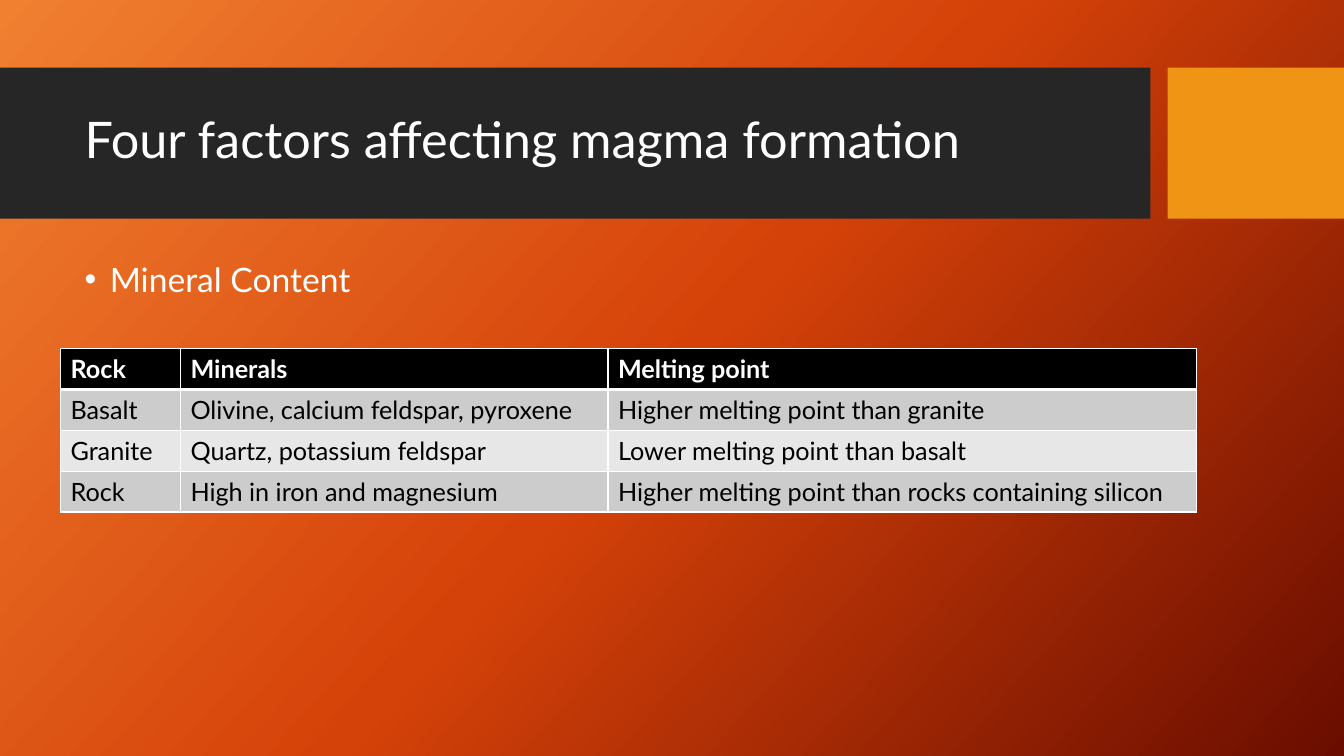
from collections import namedtuple
from copy import deepcopy
from dataclasses import dataclass

from lxml.etree import SubElement
from pptx import Presentation
from pptx.dml.color import RGBColor
from pptx.enum.shapes import MSO_SHAPE
from pptx.enum.text import MSO_ANCHOR, PP_ALIGN
from pptx.oxml.ns import qn
from pptx.util import Inches, Pt

Box = namedtuple("Box", "left top width height")


@dataclass(frozen=True)
class Theme:
    """Colours, font and type sizes of the slide."""
    font: str = "Lato"
    title_size: int = 36
    body_size: int = 24
    table_size: int = 18
    light: str = "FFFFFF"
    dark: str = "000000"
    band: str = "262626"
    accent: str = "F09415"
    bands: tuple = ("CCCCCC", "E7E7E7")
    backdrop: tuple = ((0, "F18031"), (0.5, "D54209"), (1, "6A0D00"))
    backdrop_angle: int = 42


THEME = Theme()
COLUMN_WIDTHS = (1.19, 4.24, 5.84)
ROWS = (
    ("Rock", "Minerals", "Melting point"),
    ("Basalt", "Olivine, calcium feldspar, pyroxene", "Higher melting point than granite"),
    ("Granite", "Quartz, potassium feldspar", "Lower melting point than basalt"),
    ("Rock", "High in iron and magnesium", "Higher melting point than rocks containing silicon"),
)


def write_text(frame, text, size, color=THEME.light, bold=False, spacing=1.0, bullet=None):
    """Write one formatted paragraph into a text frame."""
    frame.word_wrap = True
    paragraph = frame.paragraphs[0]
    if bullet:
        properties = paragraph._p.get_or_add_pPr()
        properties.set("marL", str(Inches(0.25)))
        properties.set("indent", str(-Inches(0.25)))
        SubElement(properties, qn("a:buFont")).set("typeface", "Arial")
        SubElement(properties, qn("a:buChar")).set("char", bullet)
    paragraph.alignment = PP_ALIGN.LEFT
    paragraph.line_spacing = spacing
    run = paragraph.add_run()
    run.text = text
    run.font.name = THEME.font
    run.font.size = Pt(size)
    run.font.bold = bold
    run.font.color.rgb = RGBColor.from_string(color)


def paint_background(slide):
    """Fill the background with the diagonal gradient."""
    fill = slide.background.fill
    fill.gradient()
    fill.gradient_angle = 360 - THEME.backdrop_angle
    stop_list = next(slide.element.iter(qn("a:gsLst")))
    stop_list.append(deepcopy(stop_list[-1]))
    for stop, (position, color) in zip(fill.gradient_stops, THEME.backdrop):
        stop.position = position
        stop.color.rgb = RGBColor.from_string(color)


def add_block(slide, box, color):
    """Add a plain filled rectangle."""
    shape = slide.shapes.add_shape(MSO_SHAPE.RECTANGLE, *map(Inches, box))
    shape.shadow.inherit = False
    shape.fill.solid()
    shape.fill.fore_color.rgb = RGBColor.from_string(color)
    shape.line.fill.background()


def add_header(slide, box, title):
    """Add the title band with its accent block at the right."""
    accent_width, gap = 1.75, 0.17
    band_width = box.width - accent_width - gap
    add_block(slide, box._replace(width=band_width), THEME.band)
    add_block(slide, box._replace(left=box.left + band_width + gap, width=accent_width), THEME.accent)
    title_box = Box(box.left + 0.74, box.top + 0.15, 10.51, 1.18)
    frame = slide.shapes.add_textbox(*map(Inches, title_box)).text_frame
    frame.vertical_anchor = MSO_ANCHOR.MIDDLE
    write_text(frame, title, THEME.title_size, spacing=0.9)


def add_body(slide, box, text):
    """Add the bulleted body text."""
    frame = slide.shapes.add_textbox(*map(Inches, box)).text_frame
    write_text(frame, text, THEME.body_size, spacing=0.9, bullet="•")


def set_borders(cell, **widths):
    """Draw the cell borders, given in points by side."""
    properties = cell._tc.get_or_add_tcPr()
    for index, (side, width) in enumerate(widths.items()):
        line = SubElement(properties, qn(f"a:ln{side}"), w=str(Pt(width)))
        fill = SubElement(line, qn("a:solidFill"))
        SubElement(fill, qn("a:srgbClr"), val=THEME.light)
        properties.insert(index, line)


def add_rock_table(slide, box):
    """Add the table of rocks, minerals and melting points."""
    shape = slide.shapes.add_table(len(ROWS), len(COLUMN_WIDTHS), *map(Inches, box))
    table = shape.table
    for column, width in zip(table.columns, COLUMN_WIDTHS):
        column.width = Inches(width)
    for row_index, values in enumerate(ROWS):
        header = row_index == 0
        table.rows[row_index].height = Inches(box.height / len(ROWS))
        color = THEME.dark if header else THEME.bands[(row_index - 1) % 2]
        for column_index, value in enumerate(values):
            cell = table.cell(row_index, column_index)
            cell.fill.solid()
            cell.fill.fore_color.rgb = RGBColor.from_string(color)
            set_borders(cell, L=1, R=1, T=3 if row_index == 1 else 1, B=3 if header else 1)
            write_text(cell.text_frame, value, THEME.table_size,
                       color=THEME.light if header else THEME.dark, bold=header)


def build_slide(presentation):
    """Build the magma formation slide."""
    slide = presentation.slides.add_slide(presentation.slide_layouts[6])
    paint_background(slide)
    add_header(slide, Box(0, 0.67, 13.33, 1.5), "Four factors affecting magma formation")
    add_body(slide, Box(0.74, 2.56, 10.51, 3.94), "Mineral Content")
    add_rock_table(slide, Box(0.6, 3.46, sum(COLUMN_WIDTHS), 1.62))


def main():
    """Create and save the presentation."""
    presentation = Presentation()
    presentation.slide_width = Inches(13.33)
    presentation.slide_height = Inches(7.5)
    build_slide(presentation)
    presentation.save("out.pptx")


if __name__ == "__main__":
    main()
